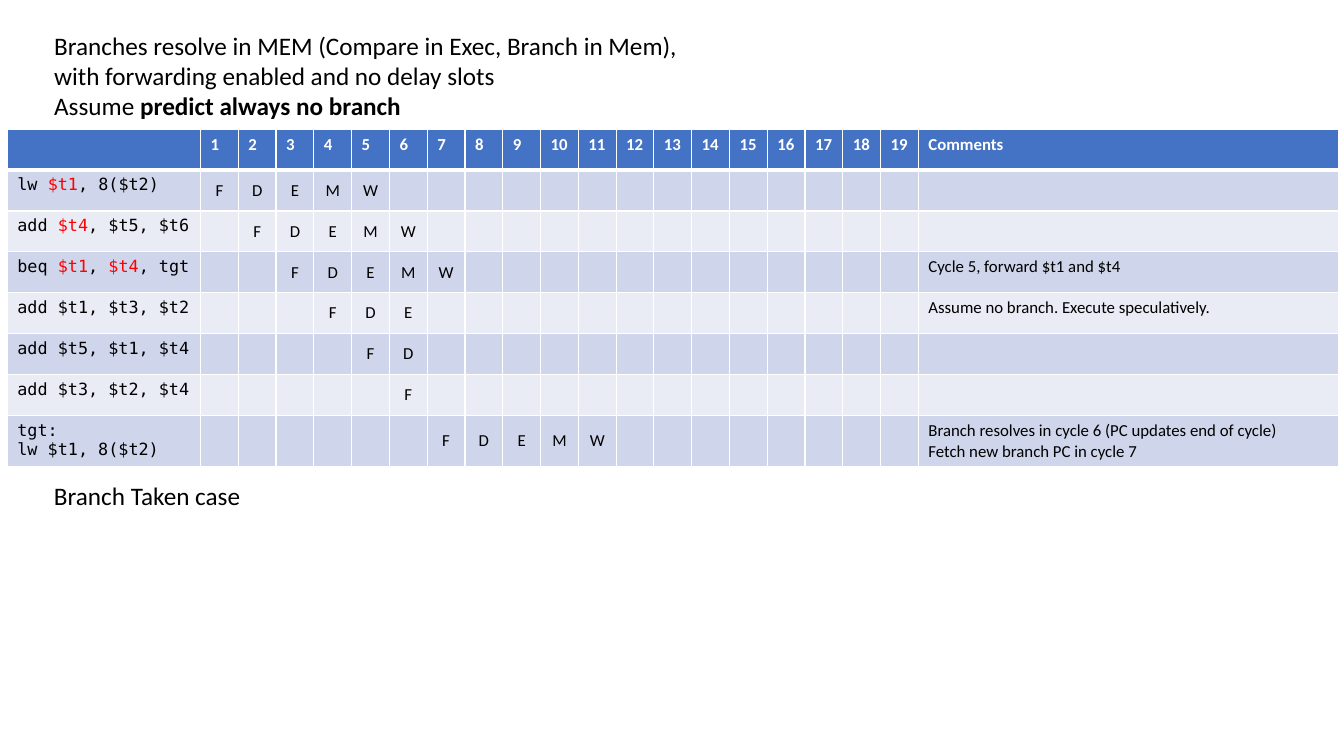
from dataclasses import dataclass
from typing import NamedTuple

from lxml import etree
from pptx import Presentation, util as u
from pptx.dml.color import RGBColor
from pptx.enum import text
from pptx.oxml import ns

EMU_PER_PX = 9525
SLIDE_SIZE = (1280, 720)
COLORS = {
    "black": "000000",
    "white": "FFFFFF",
    "red": "FF0000",
    "header": "4472C4",
    "odd_row": "CFD5EA",
    "even_row": "E9EBF5",
}
SANS, MONO = "Calibri", "DejaVu Sans Mono"
CYCLES = 19
CODE_WIDTH, CYCLE_WIDTH, COMMENT_WIDTH, ROW_HEIGHT = 184, 36, 400, 39


class Span(NamedTuple):
    text: str
    color: str = "black"
    bold: bool = False


@dataclass
class Instruction:
    code: list[Span]
    first_cycle: int
    stages: str
    comment: str = ""


INSTRUCTIONS = [
    Instruction([Span("lw "), Span("$t1", "red"), Span(", 8($t2)")], 1, "FDEMW"),
    Instruction([Span("add "), Span("$t4", "red"), Span(", $t5, $t6")], 2, "FDEMW"),
    Instruction(
        [Span("beq "), Span("$t1", "red"), Span(", "), Span("$t4", "red"), Span(", tgt")],
        3, "FDEMW", "Cycle 5, forward $t1 and $t4",
    ),
    Instruction([Span("add $t1, $t3, $t2")], 4, "FDE",
                "Assume no branch. Execute speculatively."),
    Instruction([Span("add $t5, $t1, $t4")], 5, "FD"),
    Instruction([Span("add $t3, $t2, $t4")], 6, "F"),
    Instruction(
        [Span("tgt:\nlw $t1, 8($t2)")], 7, "FDEMW",
        "Branch resolves in cycle 6 (PC updates end of cycle)\nFetch new branch PC in cycle 7",
    ),
]


def px(length: int) -> int:
    return u.Emu(length * EMU_PER_PX)


def write(frame, spans: list[Span], *, size: int = 12, font: str = SANS,
          align=text.PP_ALIGN.LEFT) -> None:
    """Write formatted spans as one paragraph, with newlines as line breaks."""
    paragraph = frame.paragraphs[0]
    paragraph.alignment = align
    for span in spans:
        for index, line in enumerate(span.text.split("\n")):
            if index:
                paragraph.add_line_break()
            run = paragraph.add_run()
            run.text = line
            run.font.name = font
            run.font.size = u.Pt(size)
            run.font.bold = span.bold
            run.font.color.rgb = RGBColor.from_string(COLORS[span.color])


def place(shape, left: int, top: int, width: int, height: int) -> None:
    shape.left, shape.top = px(left), px(top)
    shape.width, shape.height = px(width), px(height)


def format_frame(frame) -> None:
    frame.word_wrap = True
    frame.auto_size = text.MSO_AUTO_SIZE.NONE
    frame.vertical_anchor = text.MSO_ANCHOR.TOP


def style_cell(cell, fill: str, top: int = 1, bottom: int = 1) -> None:
    """Fill a cell and give it white borders, widths in points."""
    cell.fill.solid()
    cell.fill.fore_color.rgb = RGBColor.from_string(COLORS[fill])
    properties = cell._tc.get_or_add_tcPr()
    widths = {"a:lnL": 1, "a:lnR": 1, "a:lnT": top, "a:lnB": bottom}
    for index, (tag, width) in enumerate(widths.items()):
        line = etree.Element(ns.qn(tag), w=str(u.Pt(width)))
        solid = etree.SubElement(line, ns.qn("a:solidFill"))
        etree.SubElement(solid, ns.qn("a:srgbClr"), val=COLORS["white"])
        properties.insert(index, line)


def add_pipeline_table(slide) -> None:
    widths = [CODE_WIDTH] + [CYCLE_WIDTH] * CYCLES + [COMMENT_WIDTH]
    row_count = len(INSTRUCTIONS) + 1
    table = slide.shapes.add_table(
        row_count, len(widths), px(7), px(123), px(sum(widths)), px(ROW_HEIGHT * row_count)
    ).table
    for column, width in zip(table.columns, widths):
        column.width = px(width)
    for row in table.rows:
        row.height = px(ROW_HEIGHT)

    # Header row
    headings = ["", *map(str, range(1, CYCLES + 1)), "Comments"]
    for column, heading in enumerate(headings):
        cell = table.cell(0, column)
        style_cell(cell, "header", bottom=3)
        if heading:
            write(cell.text_frame, [Span(heading, "white", True)])

    # One row per instruction, its stages on consecutive cycles
    for row, instruction in enumerate(INSTRUCTIONS, start=1):
        fill = "odd_row" if row % 2 else "even_row"
        for column in range(len(widths)):
            style_cell(table.cell(row, column), fill, top=3 if row == 1 else 1)
        write(table.cell(row, 0).text_frame, instruction.code, font=MONO)
        for cycle, stage in enumerate(instruction.stages, start=instruction.first_cycle):
            cell = table.cell(row, cycle)
            cell.vertical_anchor = text.MSO_ANCHOR.MIDDLE
            write(cell.text_frame, [Span(stage)], align=text.PP_ALIGN.CENTER)
        if instruction.comment:
            write(table.cell(row, CYCLES + 1).text_frame, [Span(instruction.comment)])


def main() -> None:
    presentation = Presentation()
    presentation.slide_width, presentation.slide_height = map(px, SLIDE_SIZE)
    slide = presentation.slides.add_slide(presentation.slide_layouts[5])

    # Assumptions
    title = slide.shapes.title
    place(title, 42, 24, 625, 97)
    format_frame(title.text_frame)
    write(title.text_frame, [
        Span("Branches resolve in MEM (Compare in Exec, Branch in Mem),\n"
             "with forwarding enabled and no delay slots\nAssume "),
        Span("predict always no branch", bold=True),
    ], size=18)

    # Pipeline diagram
    add_pipeline_table(slide)

    # Case label
    label = slide.shapes.add_textbox(px(42), px(453), px(200), px(38))
    format_frame(label.text_frame)
    write(label.text_frame, [Span("Branch Taken case")], size=18)

    presentation.save("out.pptx")


if __name__ == "__main__":
    main()
